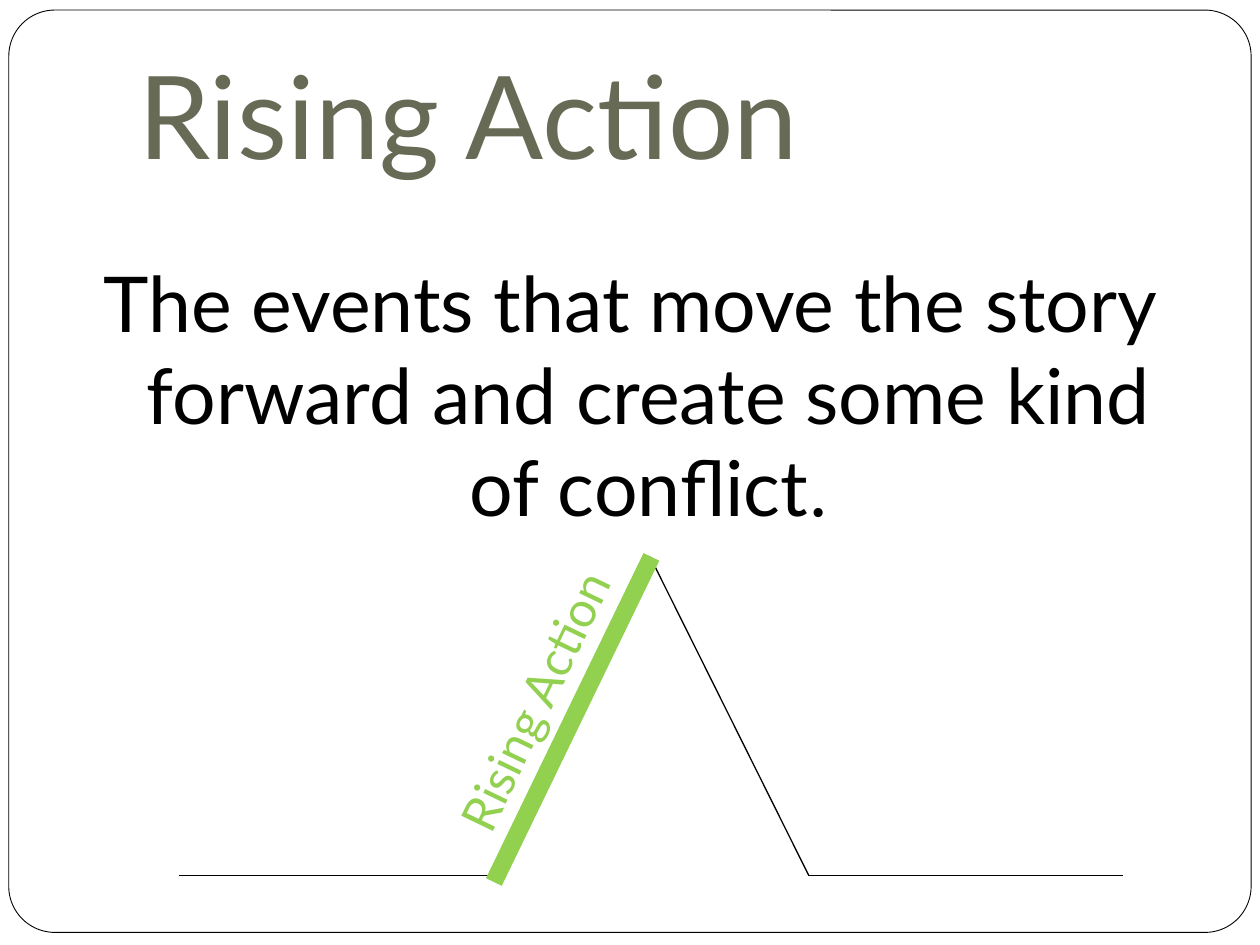
from dataclasses import dataclass

from lxml import etree
from pptx import Presentation
from pptx.dml.color import RGBColor
from pptx.enum.shapes import MSO_CONNECTOR, MSO_SHAPE
from pptx.enum.text import MSO_ANCHOR, PP_ALIGN
from pptx.oxml.ns import qn
from pptx.util import Inches, Pt

STRAIGHT = MSO_CONNECTOR.STRAIGHT
ROUNDED = MSO_SHAPE.ROUNDED_RECTANGLE
TOP, MIDDLE, BOTTOM = MSO_ANCHOR.TOP, MSO_ANCHOR.MIDDLE, MSO_ANCHOR.BOTTOM
LEFT, CENTER = PP_ALIGN.LEFT, PP_ALIGN.CENTER
BLACK, WHITE, OLIVE, GREEN = "000000", "FFFFFF", "676A55", "92D050"
FONT = "Lato"


@dataclass
class Label:
    place: tuple[float, float, float, float]
    spans: list[tuple[str, str]]
    size: float
    color: str
    anchor: MSO_ANCHOR = TOP
    align: PP_ALIGN = LEFT
    bottom: float = 0.05
    hanging: float = 0
    space_before: float = 0
    rotation: float = 0


@dataclass
class Stroke:
    start: tuple[float, float]
    end: tuple[float, float]
    color: str = BLACK
    width: float = 0.75


def rgb(value: str) -> RGBColor:
    return RGBColor.from_string(value)


def apply(target, formats: dict) -> None:
    for name, value in formats.items():
        setattr(target, name, value)


def add_frame(page) -> None:
    frame = page.shapes.add_shape(
        ROUNDED, Inches(0.07), Inches(0.08), Inches(9.86), Inches(7.32)
    )
    frame.adjustments[0] = 0.05
    frame.shadow.inherit = False
    frame.fill.solid()
    frame.fill.fore_color.rgb = rgb(WHITE)
    frame.line.color.rgb = rgb(BLACK)
    frame.line.width = Pt(0.5)


def add_label(page, label: Label) -> None:
    box = page.shapes.add_textbox(*map(Inches, label.place))
    box.rotation = label.rotation
    apply(box.text_frame, {
        "word_wrap": True,
        "vertical_anchor": label.anchor,
        "margin_bottom": Inches(label.bottom),
    })
    para = box.text_frame.paragraphs[0]
    apply(para, {"alignment": label.align, "space_before": Pt(label.space_before)})
    if label.hanging:
        properties = para._p.get_or_add_pPr()
        properties.set("marL", str(Inches(label.hanging)))
        properties.set("indent", str(-Inches(label.hanging)))
    for text, font in label.spans:
        span = para.add_run()
        span.text = text
        apply(span.font, {"name": font, "size": Pt(label.size)})
        span.font.color.rgb = rgb(label.color)


def add_stroke(page, stroke: Stroke) -> None:
    line = page.shapes.add_connector(
        STRAIGHT, *map(Inches, (*stroke.start, *stroke.end))
    )
    line.line.color.rgb = rgb(stroke.color)
    line.line.width = Pt(stroke.width)
    etree.SubElement(line._element.spPr, qn("a:effectLst"))


PLOT_POINTS = [(1.42, 6.95), (3.91, 6.95), (5.16, 4.42), (6.42, 6.95), (8.91, 6.95)]
STROKES = [Stroke(start, end) for start, end in zip(PLOT_POINTS, PLOT_POINTS[1:])]
STROKES.append(Stroke((3.92, 7), (5.17, 4.42), GREEN, 10))

LABELS = [
    Label((1, 0.3, 8.5, 1.25), [("Rising Action", FONT)], 66, OLIVE, BOTTOM, bottom=0.1),
    Label(
        (0.5, 1.75, 9, 2.75),
        [
            ("The events that move the story forward and create some kind of conflict", FONT),
            (".", "Times New Roman"),
        ],
        44, BLACK, MIDDLE, CENTER, hanging=0.3, space_before=5.8,
    ),
    Label((3, 5.22, 2.54, 0.57), [("Rising Action", FONT)], 28, GREEN, rotation=295.7),
]


def main() -> None:
    deck = Presentation()
    apply(deck, {"slide_width": Inches(10), "slide_height": Inches(7.5)})
    page = deck.slides.add_slide(deck.slide_layouts[6])
    add_frame(page)
    for stroke in STROKES:
        add_stroke(page, stroke)
    for label in LABELS:
        add_label(page, label)
    deck.save("out.pptx")


if __name__ == "__main__":
    main()
